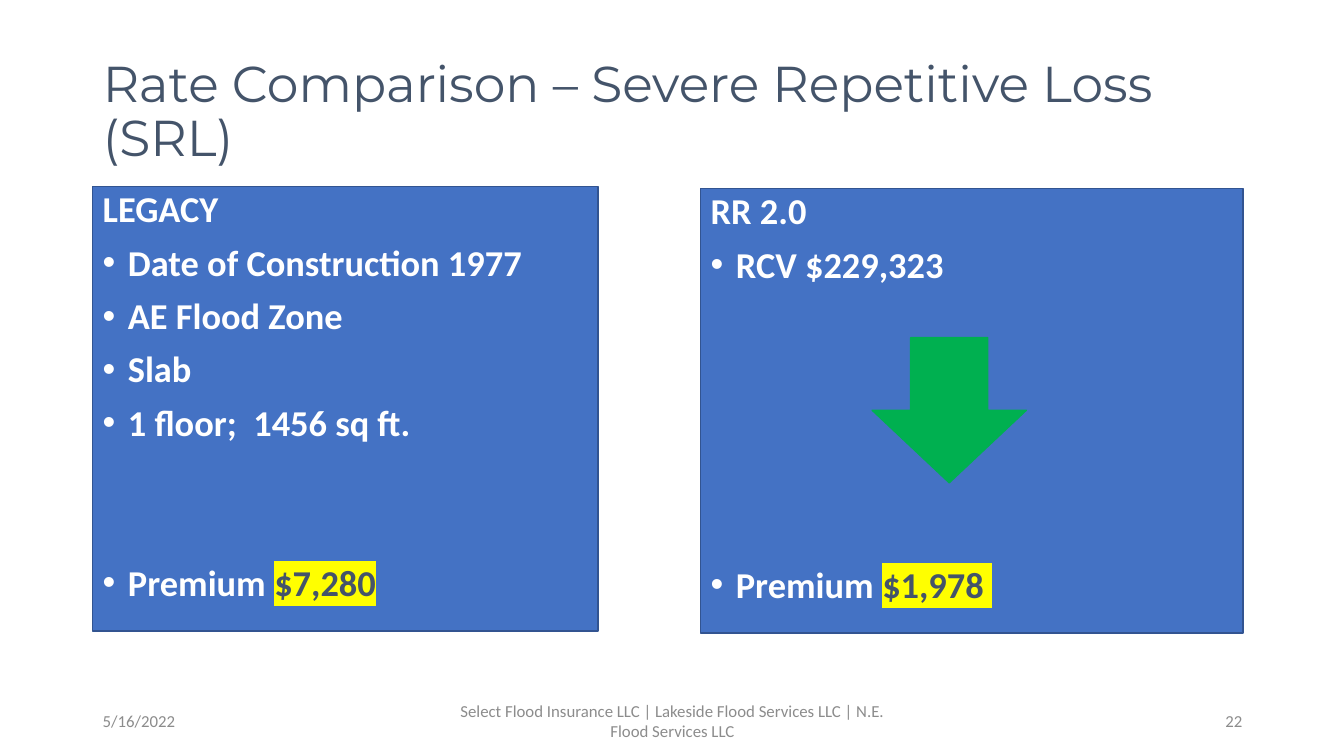
"""Build the severe repetitive loss rate comparison slide."""
from lxml import etree
from pptx import Presentation, util as u
from pptx.dml.color import RGBColor
from pptx.enum import shapes, text
from pptx.oxml.ns import qn

LEFT, MID, RIGHT = text.PP_ALIGN.LEFT, text.PP_ALIGN.CENTER, text.PP_ALIGN.RIGHT


def paint(fill, color):
    fill.solid()
    fill.fore_color.rgb = RGBColor.from_string(color)


def write(para, words, size, color, face="Calibri", bold=False):
    run = para.add_run()
    run.text = words
    looks = {"size": u.Pt(size), "name": face, "bold": bold}
    for key, value in looks.items():
        setattr(run.font, key, value)
    paint(run.font.fill, color)
    return run


prs = Presentation()
prs.slide_width, prs.slide_height = u.Inches(13.33), u.Inches(7.5)
slide = prs.slides.add_slide(prs.slide_layouts[5])

title = slide.shapes.title
spot = {"left": 0.92, "top": 0.4, "width": 11.5, "height": 1.45}
for key, value in spot.items():
    setattr(title, key, u.Inches(value))
frame = title.text_frame
frame.auto_size = text.MSO_AUTO_SIZE.NONE
frame.vertical_anchor = text.MSO_ANCHOR.MIDDLE
head = frame.paragraphs[0]
head.alignment, head.line_spacing = LEFT, 0.9
write(head, "Rate Comparison – Severe Repetitive Loss (SRL)", 36, "44546A", "Montserrat")

gap, pitch = 10, 38.1
panels = [
    (0.92, 1.85, 5.01, "LEGACY",
     ["Date of Construction 1977", "AE Flood Zone", "Slab", "1 floor;  1456 sq ft."],
     "$7,280", 2),
    (6.95, 1.87, 5.38, "RR 2.0", ["RCV $229,323"], "$1,978 ", 5),
]
for x, y, wide, name, facts, price, skip in panels:
    box = slide.shapes.add_shape(
        shapes.MSO_SHAPE.RECTANGLE, *map(u.Inches, (x, y, wide, 4.41)))
    box.shadow.inherit = False
    paint(box.fill, "4472C4")
    paint(box.line.fill, "325491")
    box.line.width = u.Pt(1)
    frame = box.text_frame
    frame.word_wrap = True
    frame.vertical_anchor = text.MSO_ANCHOR.TOP
    lines = [name, *facts, "Premium "]
    for i, words in enumerate(lines):
        para = frame.add_paragraph() if i else frame.paragraphs[0]
        para.alignment, para.line_spacing = LEFT, 0.9
        para.space_before = u.Pt(gap if i else 0)
        if i:
            props = para._p.get_or_add_pPr()
            props.set("marL", str(u.Inches(0.25)))
            props.set("indent", str(-u.Inches(0.25)))
            etree.SubElement(props, qn("a:buFont")).set("typeface", "Arial")
            etree.SubElement(props, qn("a:buChar")).set("char", "•")
        write(para, words, 26, "FFFFFF", bold=True)
    para.space_before = u.Pt(gap + skip * pitch)
    run = write(para, price, 26, "44546A", bold=True)
    mark = etree.Element(qn("a:highlight"))
    etree.SubElement(mark, qn("a:srgbClr")).set("val", "FFFF00")
    run._r.rPr.find(qn("a:solidFill")).addnext(mark)

notes = [
    (4.42, 4.5, MID, "Select Flood Insurance LLC | Lakeside Flood Services LLC | "
                     "N.E. Flood Services LLC"),
    (0.92, 3, LEFT, "5/16/2022"),
    (9.42, 3, RIGHT, "22"),
]
for x, wide, side, words in notes:
    box = slide.shapes.add_textbox(*map(u.Inches, (x, 6.95, wide, 0.4)))
    frame = box.text_frame
    frame.word_wrap = True
    frame.vertical_anchor = text.MSO_ANCHOR.MIDDLE
    para = frame.paragraphs[0]
    para.alignment = side
    write(para, words, 12, "8C8C8C")

arrow = slide.shapes.add_shape(
    shapes.MSO_SHAPE.DOWN_ARROW, *map(u.Inches, (8.65, 3.35, 1.53, 1.44)))
arrow.shadow.inherit = False
for fill in (arrow.fill, arrow.line.fill):
    paint(fill, "00B050")
arrow.line.width = u.Pt(1)

prs.save("out.pptx")
